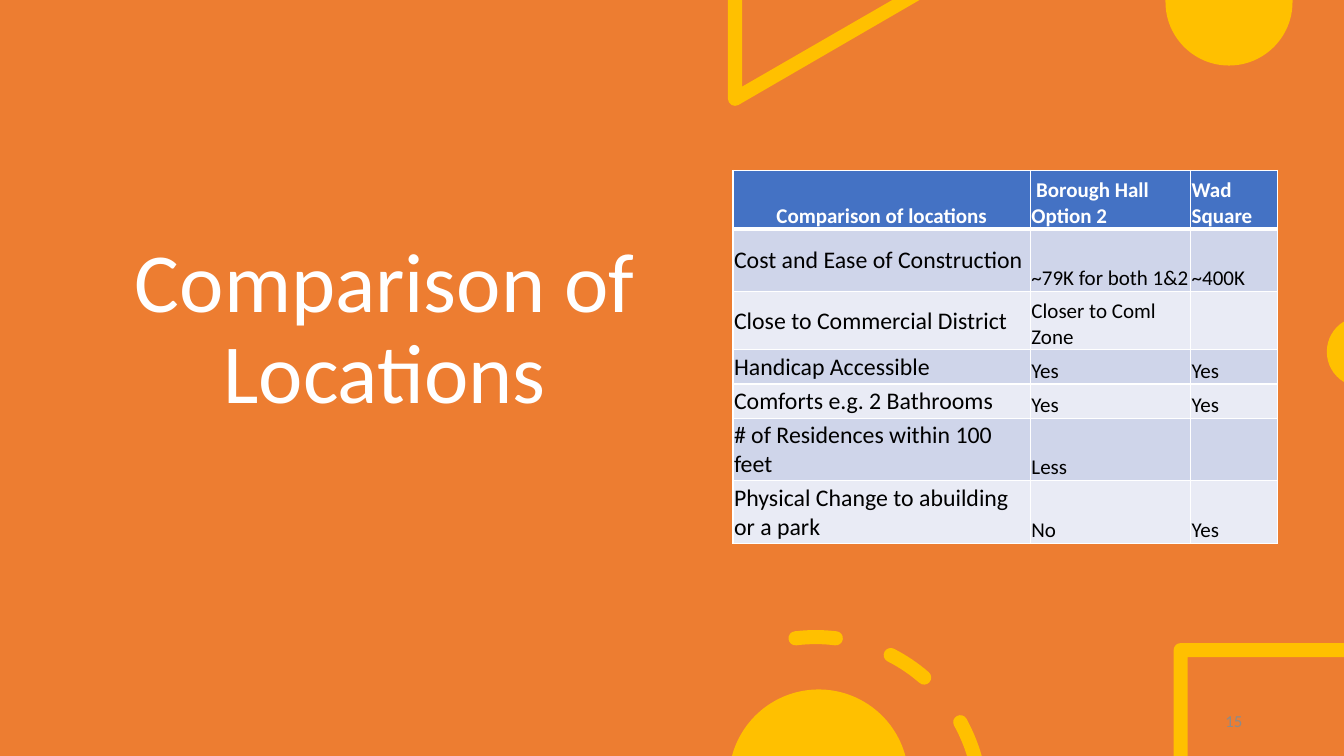
import math

import pptx
import pptx.dml.color
import pptx.enum.shapes
import pptx.enum.text
import pptx.oxml
import pptx.oxml.ns
import pptx.util

Inches = pptx.util.Inches
Pt = pptx.util.Pt
ALIGN = pptx.enum.text.PP_ALIGN
ANCHOR = pptx.enum.text.MSO_ANCHOR
qn = pptx.oxml.ns.qn

WIDTH, HEIGHT = 13.33, 7.5
FONT = "Calibri"
STROKE = 0.07
COLORS = {
    "orange": "ED7D31",
    "gold": "FFC000",
    "white": "FFFFFF",
    "black": "000000",
    "header": "4472C4",
    "dark_band": "CFD5EA",
    "light_band": "E9EBF5",
    "number": "8B8B8B",
}
COLUMN_WIDTHS = [2.95, 1.59, 0.86]
ROW_HEIGHTS = [0.58, 0.62, 0.58, 0.34, 0.34, 0.62, 0.62]
LOCATIONS = [
    ["Comparison of locations", " Borough Hall Option 2", "Wad Square"],
    ["Cost and Ease of Construction", "~79K for both 1&2", "~400K"],
    ["Close to Commercial District", "Closer to Coml Zone", ""],
    ["Handicap Accessible", "Yes", "Yes"],
    ["Comforts e.g. 2 Bathrooms", "Yes", "Yes"],
    ["# of Residences within 100 feet", "Less", ""],
    ["Physical Change to abuilding or a park", "No", "Yes"],
]


def rgb(name):
    return pptx.dml.color.RGBColor.from_string(COLORS[name])


def style(paragraph, size, color, align, bold=False):
    paragraph.alignment = align
    paragraph.font.name = FONT
    paragraph.font.size = Pt(size)
    paragraph.font.bold = bold
    paragraph.font.color.rgb = rgb(color)


def paint(shape, color):
    shape.fill.solid()
    shape.fill.fore_color.rgb = rgb(color)
    shape.line.fill.background()
    shape.shadow.inherit = False


def corners(*points):
    return [[point] for point in points]


def arc(cx, cy, radius, start, end):
    count = math.ceil(abs(end - start) / 90)
    step = math.radians(end - start) / count
    reach = 4 / 3 * math.tan(step / 4)
    segments = []
    for i in range(count + 1):
        angle = math.radians(start) + i * step
        x, y = cx + radius * math.cos(angle), cy + radius * math.sin(angle)
        dx, dy = -reach * radius * math.sin(angle), reach * radius * math.cos(angle)
        segments.append([leaving, (x - dx, y - dy), (x, y)] if i else [(x, y)])
        leaving = (x + dx, y + dy)
    return segments


def dash(cx, cy, radius, start, end):
    cap_x, cap_y = arc(cx, cy, radius, start, end)[-1][-1]
    first_x, first_y = arc(cx, cy, radius, start, end)[0][0]
    return (
        arc(cx, cy, radius + STROKE, start, end)
        + arc(cap_x, cap_y, STROKE, end, end + 180)[1:]
        + arc(cx, cy, radius - STROKE, end, start)[1:]
        + arc(first_x, first_y, STROKE, start + 180, start + 360)[1:]
    )


def cut_dash(cx, cy, radius, start, floor):
    outer, inner = radius + STROKE, radius - STROKE
    outer_end, inner_end = [
        math.degrees(math.asin((floor - cy) / r)) for r in (outer, inner)
    ]
    first_x, first_y = arc(cx, cy, radius, start, outer_end)[0][0]
    return (
        arc(cx, cy, outer, start, outer_end)
        + arc(cx, cy, inner, inner_end, start)
        + arc(first_x, first_y, STROKE, start + 180, start + 360)[1:]
    )


def add_outline(slide, contours):
    builder = None
    for contour in contours:
        start, *rest = [(1000 * x, 1000 * y) for segment in contour for x, y in segment]
        if builder is None:
            builder = slide.shapes.build_freeform(*start, scale=Inches(1) / 1000)
        else:
            builder.move_to(*start)
        builder.add_line_segments(rest, close=True)
    shape = builder.convert_to_shape()
    lines = iter(list(shape._element.iter(qn("a:lnTo"))))
    for contour in contours:
        for segment in contour[1:]:
            steps = [next(lines) for _ in segment]
            if len(steps) == 3:
                curve = pptx.oxml.parse_xml(
                    f'<a:cubicBezTo {pptx.oxml.ns.nsdecls("a")}/>'
                )
                steps[0].addprevious(curve)
                for step in steps:
                    curve.append(step[0])
                    step.getparent().remove(step)
    paint(shape, "gold")


def add_background(slide, left, top, width, height):
    backdrop = slide.shapes.add_shape(
        pptx.enum.shapes.MSO_SHAPE.RECTANGLE,
        Inches(left), Inches(top), Inches(width), Inches(height),
    )
    paint(backdrop, "orange")


def add_decorations(slide, left, top, width, height):
    right, bottom = left + width, top + height
    triangle = corners(
        (left, top), (left + 0.14, top), (left + 0.14, top + 0.86),
        (left + 1.63, top), (left + 1.9, top),
    ) + arc(left + STROKE, top + 0.98, STROKE, 60, 180)
    top_disc = corners(
        (right - 1.77, top), (right - 0.51, top),
    ) + arc(right - 1.14, top + 0.02, 0.63, 0, 180)
    square = corners(
        (right, bottom - 1.12), (right, bottom - 0.98),
        (right - 1.55, bottom - 0.98), (right - 1.55, bottom),
        (right - 1.69, bottom),
    ) + arc(right - 1.62, bottom - 1.05, STROKE, 180, 270)
    ring = (left + 0.87, bottom + 0.46, 1.64)
    ring_dashes = [
        cut_dash(*ring, -29, bottom),
        dash(*ring, -63, -49),
        dash(*ring, -97, -83),
    ]
    add_outline(slide, [triangle])
    add_outline(slide, [top_disc])
    add_outline(slide, [arc(right + 0.18, top + 3.49, 0.35, 121, 239)])
    add_outline(slide, ring_dashes)
    add_outline(slide, [arc(left + 0.9, bottom + 0.23, 0.89, 195, 345)])
    add_outline(slide, [square])


def add_text(slide, left, top, width, height, text, anchor):
    box = slide.shapes.add_textbox(Inches(left), Inches(top), Inches(width), Inches(height))
    frame = box.text_frame
    frame.word_wrap = True
    frame.vertical_anchor = anchor
    frame.text = text
    return frame.paragraphs[0]


def add_title(slide, left, top, width, height):
    title = add_text(slide, left, top, width, height, "Comparison of Locations", ANCHOR.BOTTOM)
    style(title, 60, "white", ALIGN.CENTER)
    title.line_spacing = 0.9
    title.space_after = Pt(6)


def add_slide_number(slide, left, top, width, height):
    number = add_text(slide, left, top, width, height, "15", ANCHOR.MIDDLE)
    style(number, 12, "number", ALIGN.RIGHT)


def add_locations_table(slide, left, top, width, height):
    table = slide.shapes.add_table(
        len(LOCATIONS), len(COLUMN_WIDTHS),
        Inches(left), Inches(top), Inches(width), Inches(height),
    ).table
    for column, column_width in zip(table.columns, COLUMN_WIDTHS):
        column.width = Inches(column_width)
    for r, (row_height, texts) in enumerate(zip(ROW_HEIGHTS, LOCATIONS)):
        table.rows[r].height = Inches(row_height)
        header = r == 0
        band = "header" if header else "dark_band" if r % 2 else "light_band"
        for c, text in enumerate(texts):
            criterion = c == 0 and not header
            cell = table.cell(r, c)
            cell.margin_left = cell.margin_right = cell.margin_top = Inches(0.01)
            cell.margin_bottom = 0
            cell.vertical_anchor = ANCHOR.MIDDLE if criterion else ANCHOR.BOTTOM
            for side in "LRTB":
                thick = (header and side == "B") or (r == 1 and side == "T")
                cell._tc.get_or_add_tcPr().append(pptx.oxml.parse_xml(
                    f'<a:ln{side} {pptx.oxml.ns.nsdecls("a")} w="{Pt(3 if thick else 1)}">'
                    f'<a:solidFill><a:srgbClr val="{COLORS["white"]}"/></a:solidFill></a:ln{side}>'
                ))
            cell.fill.solid()
            cell.fill.fore_color.rgb = rgb(band)
            cell.text = text
            style(
                cell.text_frame.paragraphs[0], 17 if criterion else 15,
                "white" if header else "black",
                ALIGN.CENTER if header and c == 0 else ALIGN.LEFT, header,
            )


deck = pptx.Presentation()
deck.slide_width, deck.slide_height = Inches(WIDTH), Inches(HEIGHT)
locations_slide = deck.slides.add_slide(deck.slide_layouts[6])
add_background(locations_slide, 0, 0, WIDTH, HEIGHT)
add_title(locations_slide, 0.96, 0.87, 5.71, 3.36)
add_decorations(locations_slide, 7.22, 0, WIDTH - 7.22, HEIGHT)
add_locations_table(locations_slide, 7.27, 1.69, sum(COLUMN_WIDTHS), sum(ROW_HEIGHTS))
add_slide_number(locations_slide, 9.42, 6.95, 3, 0.4)
deck.save("out.pptx")
